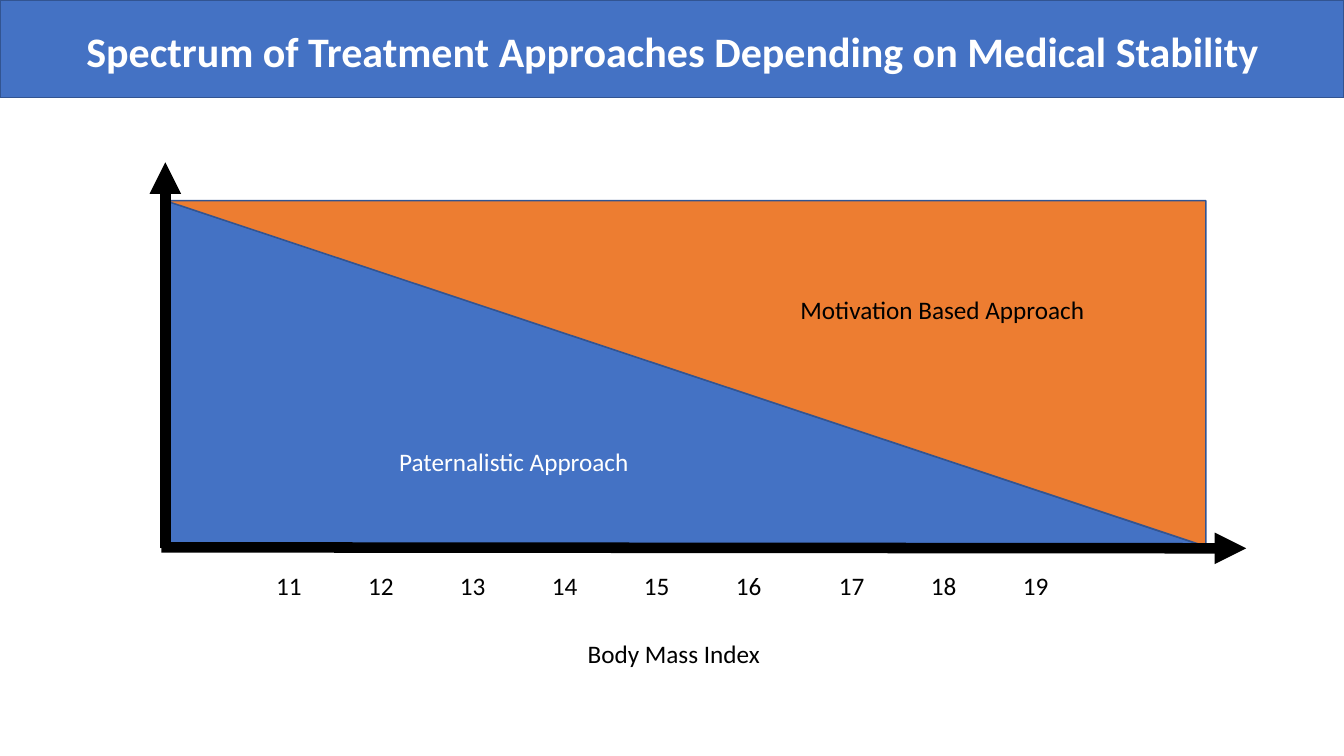
from lxml.etree import SubElement
from pptx import Presentation
from pptx.dml.color import RGBColor
from pptx.enum.shapes import MSO_CONNECTOR, MSO_SHAPE
from pptx.enum.text import MSO_ANCHOR, MSO_AUTO_SIZE, PP_ALIGN
from pptx.oxml.ns import qn
from pptx.util import Inches, Pt

COLORS = {
    "blue": "4472C4",
    "orange": "ED7D31",
    "outline": "325491",
    "black": "000000",
    "white": "FFFFFF",
}
FONT = "Calibri"
TITLE_ONLY = 5
SLIDE_WIDTH, SLIDE_HEIGHT = 13.33, 7.5
LABEL_HEIGHT = 0.4


def color(name):
    return RGBColor.from_string(COLORS[name])


def write_text(shape, text, size=18, font_color="black", bold=False,
               align=PP_ALIGN.LEFT, anchor=MSO_ANCHOR.TOP, wrap=True,
               auto_size=MSO_AUTO_SIZE.NONE):
    frame = shape.text_frame
    frame.text = text
    frame.word_wrap = wrap
    frame.auto_size = auto_size
    frame.vertical_anchor = anchor
    paragraph = frame.paragraphs[0]
    paragraph.alignment = align
    font = paragraph.runs[0].font
    font.name = FONT
    font.size = Pt(size)
    font.bold = bold
    font.color.rgb = color(font_color)


def add_label(slide, text, left, top, width, **text_format):
    box = slide.shapes.add_textbox(
        Inches(left), Inches(top), Inches(width), Inches(LABEL_HEIGHT))
    write_text(box, text, auto_size=MSO_AUTO_SIZE.SHAPE_TO_FIT_TEXT, **text_format)


def add_filled_shape(slide, preset, left, top, width, height, fill):
    shape = slide.shapes.add_shape(
        preset, Inches(left), Inches(top), Inches(width), Inches(height))
    shape.shadow.inherit = False
    shape.fill.solid()
    shape.fill.fore_color.rgb = color(fill)
    shape.line.color.rgb = color("outline")
    shape.line.width = Pt(1)
    return shape


def add_axis(slide, start_x, start_y, end_x, end_y):
    """Draw a thick black line with an arrowhead at its end."""
    axis = slide.shapes.add_connector(
        MSO_CONNECTOR.STRAIGHT,
        Inches(start_x), Inches(start_y), Inches(end_x), Inches(end_y))
    axis.line.color.rgb = color("black")
    axis.line.width = Pt(7.5)
    SubElement(axis.line._get_or_add_ln(), qn("a:tailEnd"), type="triangle")
    SubElement(axis.element.spPr, qn("a:effectLst"))


def add_title_banner(slide, left, top, width, height):
    banner = add_filled_shape(
        slide, MSO_SHAPE.RECTANGLE, left, top, width, height, "blue")
    title = slide.shapes.title
    title.left, title.top = Inches(left + 0.7), Inches(top + 0.2)
    title.width, title.height = Inches(width - 1.38), Inches(0.61)
    write_text(title, "Spectrum of Treatment Approaches Depending on Medical Stability",
               size=30, font_color="white", bold=True, align=PP_ALIGN.CENTER,
               wrap=False)
    title.element.addprevious(banner.element)


def add_spectrum(slide, left, top, width, height):
    """Draw the two opposing triangles and the axes along their edges."""
    bottom = top + height
    paternalistic = add_filled_shape(
        slide, MSO_SHAPE.RIGHT_TRIANGLE, left, top, width, height, "blue")
    write_text(paternalistic, "Paternalistic Approach", font_color="white",
               align=PP_ALIGN.CENTER, anchor=MSO_ANCHOR.MIDDLE)
    motivation = add_filled_shape(
        slide, MSO_SHAPE.RIGHT_TRIANGLE, left, top, width - 0.05, height - 0.02, "orange")
    motivation.rotation = 180
    add_axis(slide, left, bottom, left, top - 0.38)
    add_axis(slide, left - 0.04, bottom - 0.01, left + width + 0.35, bottom)
    add_label(slide, "Motivation Based Approach", left + 6.2, top + 0.88, 3.75)


def add_index_scale(slide, left, top):
    """Place the body mass index values in a row, with the name below."""
    step, gap_before_17 = 0.912, 0.11
    for position, value in enumerate(range(11, 20)):
        shift = gap_before_17 if value >= 17 else 0
        add_label(slide, str(value), left + position * step + shift, top, 0.46)
    add_label(slide, "Body Mass Index", left + 3.09, top + 0.67, 1.93, wrap=False)


def main():
    presentation = Presentation()
    presentation.slide_width = Inches(SLIDE_WIDTH)
    presentation.slide_height = Inches(SLIDE_HEIGHT)
    slide = presentation.slides.add_slide(presentation.slide_layouts[TITLE_ONLY])
    add_spectrum(slide, 1.64, 1.99, 10.37, 3.45)
    add_index_scale(slide, 2.64, 5.61)
    add_title_banner(slide, 0, 0, SLIDE_WIDTH, 0.97)
    presentation.save("out.pptx")


if __name__ == "__main__":
    main()
